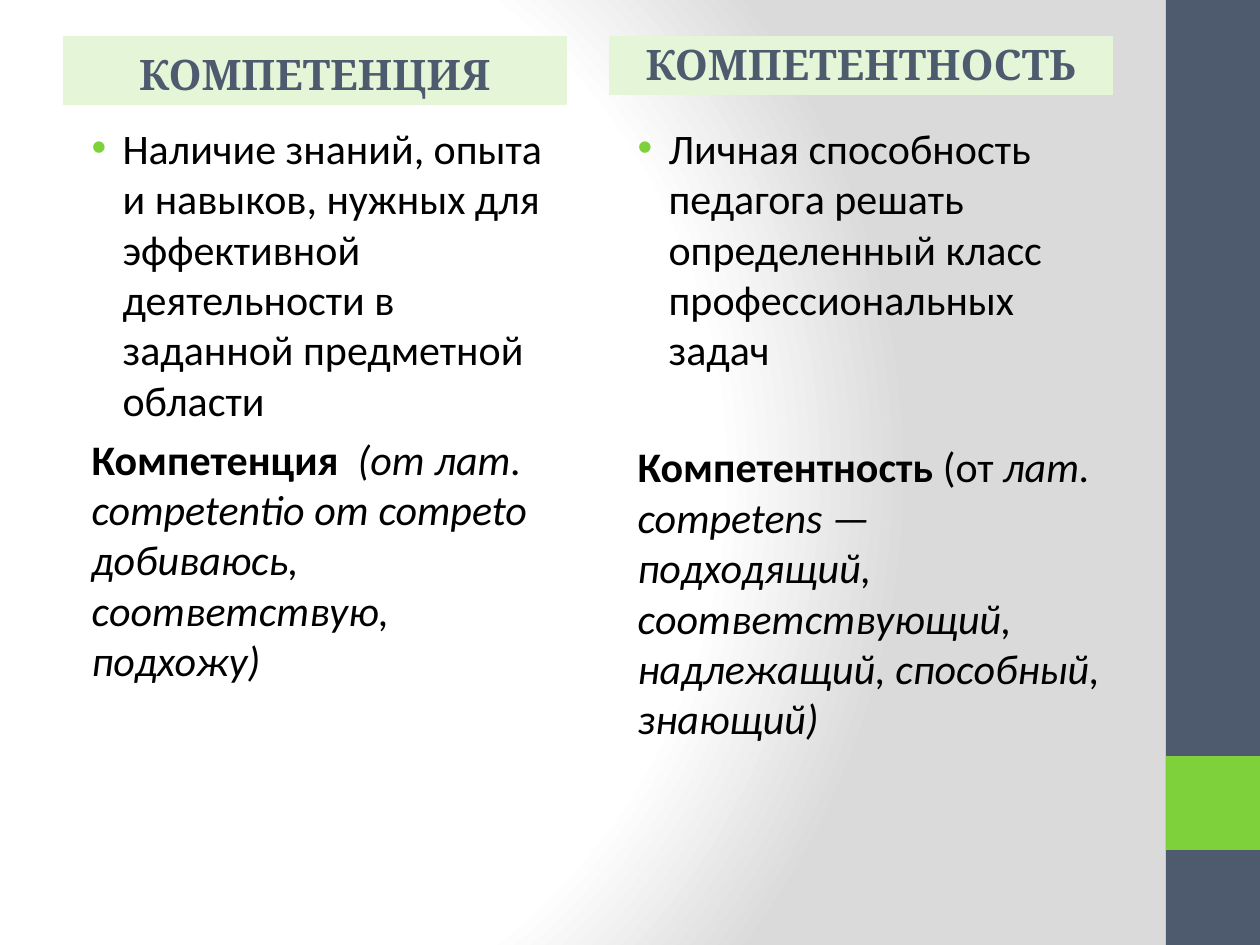
"""Build a slide that compares competency and competence in two columns."""
from lxml import etree
from pptx import Presentation, util as u
from pptx.dml.color import RGBColor
from pptx.enum import shapes, text
from pptx.oxml.ns import qn

PX = 914400 / 126
COLORS = {"slate": "4E5B6F", "green": "7FD13B", "pale": "E5F6D8",
          "black": "000000", "white": "FFFFFF", "grey": "DADADA"}
SIDEBAR = [("slate", 0, 945), ("green", 756, 94)]
GRADIENT = [(0, "white"), (75, "white"), (100, "grey")]
FOCUS = {"l": 20, "t": 50, "r": 100, "b": 50}
COLUMNS = [
    {"left": 63, "head": "КОМПЕТЕНЦИЯ", "head_height": 69, "gap": 4.8,
     "point": "Наличие знаний, опыта и навыков, нужных для эффективной "
              "деятельности в заданной предметной области",
     "origin": [("Компетенция  ", True, False),
                ("(от лат. competentio от competo добиваюсь, "
                 "соответствую, подхожу)", False, True)]},
    {"left": 609, "head": "КОМПЕТЕНТНОСТЬ", "head_height": 59, "gap": 38,
     "point": "Личная способность педагога решать определенный класс "
              "профессиональных задач",
     "origin": [("Компетентность ", True, False), ("(от ", False, False),
                ("лат. competens — подходящий, соответствующий, "
                 "надлежащий, способный, знающий)", False, True)]},
]
WIDTH, HEAD_TOP, BODY_TOP, BODY_HEIGHT = 504, 36, 116, 728
HANG, MARGIN = 31, 16


def px(n):
    return u.Emu(round(n * PX))


def rgb(name):
    return RGBColor.from_string(COLORS[name])


def add(parent, tag, **attrs):
    el = etree.SubElement(parent, qn(tag))
    for key, value in attrs.items():
        el.set(key, str(value))
    return el


def place(sp, left, top, width, height):
    sp.left, sp.top, sp.width, sp.height = map(px, (left, top, width, height))


def set_background(s):
    s.background.fill.gradient()
    grad = s.element.find(".//" + qn("a:gradFill"))
    for child in list(grad):
        grad.remove(child)
    stops = add(grad, "a:gsLst")
    for pos, name in GRADIENT:
        add(add(stops, "a:gs", pos=pos * 1000), "a:srgbClr", val=COLORS[name])
    path = add(grad, "a:path", path="circle")
    add(path, "a:fillToRect", **{k: v * 1000 for k, v in FOCUS.items()})


def write(p, runs, font, color, gap=4.8):
    p.space_before = u.Pt(gap)
    for words, bold, italic in runs:
        r = p.add_run()
        r.text = words
        r.font.size, r.font.name = u.Pt(24), font
        r.font.bold, r.font.italic = bold, italic
        r.font.color.rgb = rgb(color)


def set_bullet(p, bulleted):
    pPr = p._p.get_or_add_pPr()
    pPr.set("marL", str(px(MARGIN + HANG * bulleted)))
    pPr.set("indent", str(px(-HANG * bulleted)))
    if bulleted:
        add(add(pPr, "a:buClr"), "a:srgbClr", val=COLORS["green"])
        add(pPr, "a:buFont", typeface="Arial")
        add(pPr, "a:buChar", char="•")
    else:
        add(pPr, "a:buNone")


def fill_column(head, body, col):
    place(head, col["left"], HEAD_TOP, WIDTH, col["head_height"])
    head.fill.solid()
    head.fill.fore_color.rgb = rgb("pale")
    tf = head.text_frame
    tf.auto_size = text.MSO_AUTO_SIZE.NONE
    tf.vertical_anchor = text.MSO_ANCHOR.BOTTOM
    p = tf.paragraphs[0]
    p.alignment = text.PP_ALIGN.CENTER
    write(p, [(col["head"], True, False)], "Cambria", "slate")

    place(body, col["left"], BODY_TOP, WIDTH, BODY_HEIGHT)
    tf = body.text_frame
    tf.auto_size = text.MSO_AUTO_SIZE.NONE
    p = tf.paragraphs[0]
    write(p, [(col["point"], False, False)], "Calibri", "black")
    set_bullet(p, True)
    p = tf.add_paragraph()
    write(p, col["origin"], "Calibri", "black", col["gap"])
    set_bullet(p, False)


def main():
    prs = Presentation()
    prs.slide_width, prs.slide_height = px(1260), px(945)
    s = prs.slides.add_slide(prs.slide_layouts.get_by_name("Comparison"))
    set_background(s)
    title, *parts = s.placeholders
    title.element.getparent().remove(title.element)
    for i, col in enumerate(COLUMNS):
        fill_column(parts[2 * i], parts[2 * i + 1], col)
    for color, top, height in SIDEBAR:
        sp = s.shapes.add_shape(shapes.MSO_SHAPE.RECTANGLE, 0, 0, 0, 0)
        place(sp, 1166, top, 94, height)
        sp.shadow.inherit = False
        sp.fill.solid()
        sp.fill.fore_color.rgb = rgb(color)
        sp.line.fill.background()
    prs.save("out.pptx")


if __name__ == "__main__":
    main()
